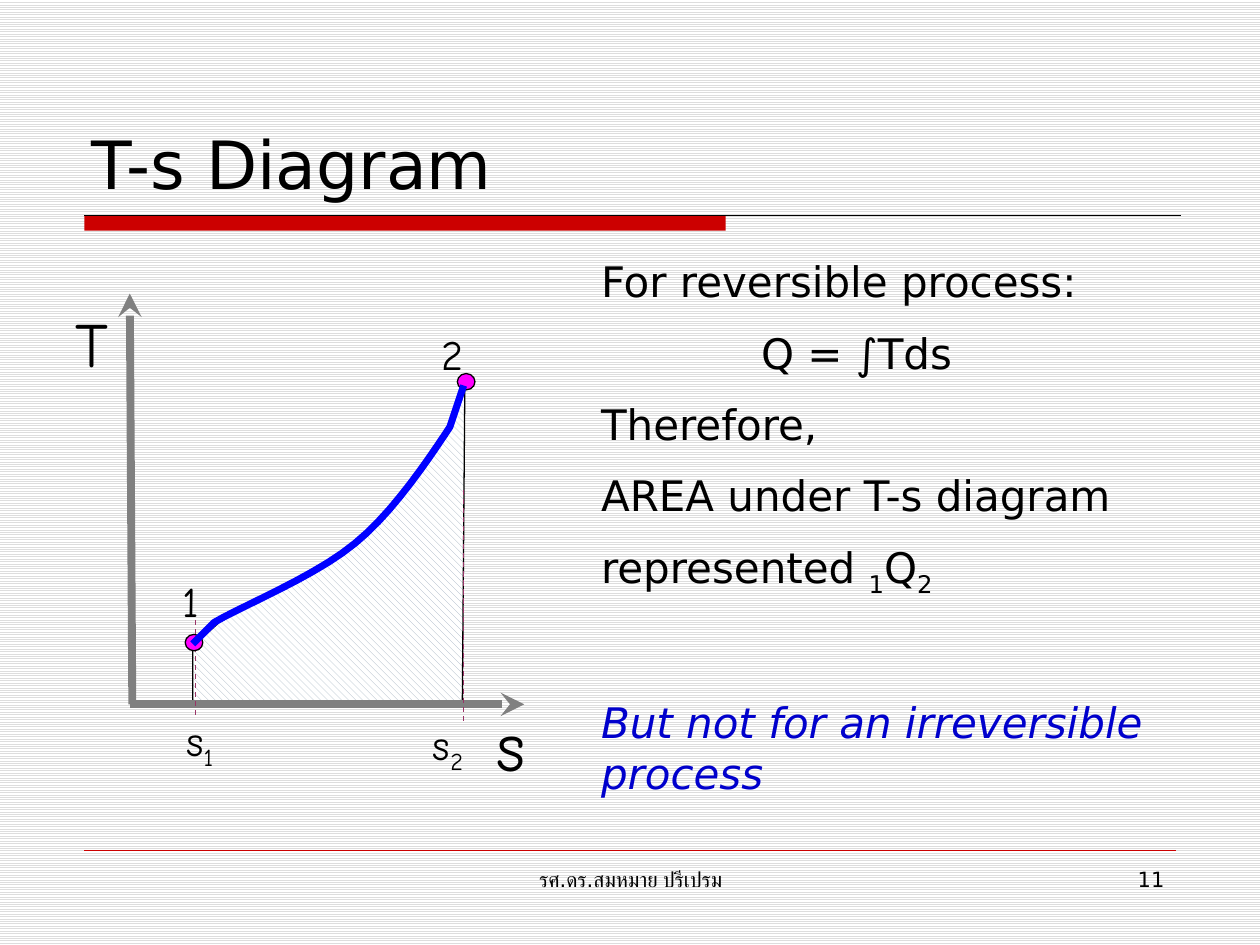
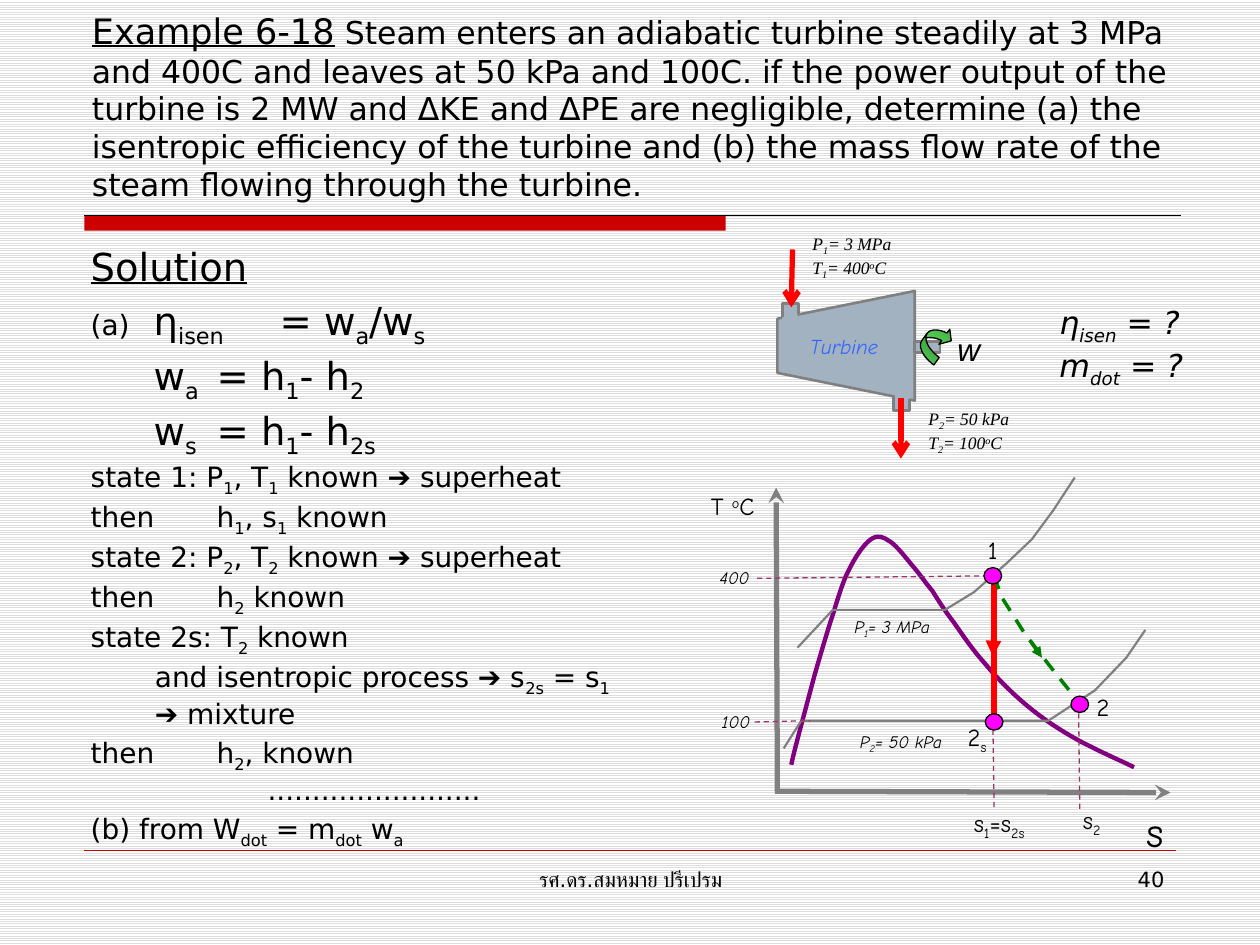
from pptx import Presentation
from pptx import util as u
from pptx.dml.color import RGBColor
from pptx.enum import dml, shapes, text
from pptx.oxml import ns, xmlchemy

BLACK = RGBColor(0x00, 0x00, 0x00)
WHITE = RGBColor(0xFF, 0xFF, 0xFF)
STRIPE = RGBColor(0xDD, 0xDD, 0xDD)
BAND_RED = RGBColor(0xCC, 0x00, 0x00)
RED = RGBColor(0xFF, 0x00, 0x00)
GRAY = RGBColor(0x80, 0x80, 0x80)
STEEL = RGBColor(0xA3, 0xB2, 0xC1)
MAGENTA = RGBColor(0xFF, 0x00, 0xFF)
PLUM = RGBColor(0x99, 0x33, 0x66)
PURPLE = RGBColor(0x80, 0x00, 0x80)
BLUE = RGBColor(0x00, 0x00, 0xFF)
NOTE_BLUE = RGBColor(0x00, 0x00, 0xCC)
SKY = RGBColor(0x33, 0x66, 0xFF)
GREEN = RGBColor(0x00, 0x80, 0x00)
LIME = RGBColor(0x66, 0xFF, 0x66)
LEAF = RGBColor(0x3E, 0x9B, 0x3E)

SANS = "DejaVu Sans"
COMIC = "Comic Neue"
SERIF = "Times New Roman"
CENTER, RIGHT, LEFT = text.PP_ALIGN.CENTER, text.PP_ALIGN.RIGHT, text.PP_ALIGN.LEFT
AUTHOR = "รศ.ดร.สมหมาย ปรีเปรม"
MARKUP_RAISED = "o"


def add_xml(parent, tag, **attrs):
    """Append a DrawingML element with the given attributes."""
    child = xmlchemy.OxmlElement(tag)
    for name, value in attrs.items():
        child.set(name, str(value))
    parent.append(child)
    return child


def write(p, marked, **font):
    """Add runs to a paragraph; text between bars is lowered, a degree sign o raised."""
    for i, part in enumerate(marked.split("|")):
        if part:
            r = p.add_run()
            r.text = part
            for name, value in font.items():
                setattr(r.font, name, value)
            if i % 2:
                shift = 30000 if part == MARKUP_RAISED else -25000
                r.font._element.set("baseline", str(shift))


def style(p, size, name=SANS, color=BLACK, italic=False, align=LEFT):
    """Set the font and alignment of a whole paragraph."""
    p.alignment = align
    p.font.size = u.Pt(size)
    p.font.name = name
    p.font.italic = italic
    p.font.color.rgb = color


def unbullet(p, indent=0, tabs=()):
    """Remove the bullet and set the left indent and tab stops."""
    pPr = p._p.get_or_add_pPr()
    pPr.set("marL", str(u.Inches(indent)))
    pPr.set("indent", "0")
    add_xml(pPr, "a:buNone")
    if tabs:
        stops = add_xml(pPr, "a:tabLst")
        for stop in tabs:
            add_xml(stops, "a:tab", pos=u.Inches(stop), algn="l")


def place(sp, left, top, width, height):
    """Move and resize a shape."""
    sp.left, sp.top, sp.width, sp.height = map(u.Inches, (left, top, width, height))


def paint(sp, fill=None, line=None, weight=0.75):
    """Give a shape a flat fill and outline, or none."""
    sp.shadow.inherit = False
    if fill is None:
        sp.fill.background()
    else:
        sp.fill.solid()
        sp.fill.fore_color.rgb = fill
    if line is None:
        sp.line.fill.background()
    else:
        sp.line.color.rgb = line
        sp.line.width = u.Pt(weight)


def flatten(points, steps=10):
    """Turn points and cubic segments (six numbers) into plain points."""
    flat = []
    for point in points:
        if len(point) == 2:
            flat.append(point)
            continue
        knots = [flat[-1], point[:2], point[2:4], point[4:]]
        for i in range(1, steps + 1):
            t = i / steps
            weights = ((1 - t) ** 3, 3 * t * (1 - t) ** 2, 3 * t * t * (1 - t), t ** 3)
            flat.append(tuple(sum(w * k[axis] for w, k in zip(weights, knots))
                              for axis in (0, 1)))
    return flat


class Panel:
    """A region of a slide whose parts are placed from its top left corner."""

    def __init__(self, slide, left, top):
        """Keep the slide's shapes and the corner."""
        self.shapes, self.left, self.top = slide.shapes, left, top

    def at(self, x, y):
        """Return slide lengths for a point of the panel."""
        return u.Inches(self.left + x), u.Inches(self.top + y)

    def label(self, x, y, width, height, lines, size, name=COMIC, align=CENTER, **font):
        """Add a text box with one paragraph for each line."""
        box = self.shapes.add_textbox(*self.at(x, y), u.Inches(width), u.Inches(height))
        tf = box.text_frame
        tf.word_wrap = True
        for i, line in enumerate(lines.split("\n")):
            p = tf.add_paragraph() if i else tf.paragraphs[0]
            style(p, size, name, align=align, **font)
            write(p, line)

    def line(self, start, end, color, weight, arrow=None, dashed=False):
        """Add a straight line, with an arrowhead at its end if one is named."""
        c = self.shapes.add_connector(shapes.MSO_CONNECTOR.STRAIGHT,
                                      *self.at(*start), *self.at(*end))
        c.line.color.rgb = color
        c.line.width = u.Pt(weight)
        if dashed:
            c.line.dash_style = dml.MSO_LINE.DASH
        if arrow:
            add_xml(c._element.spPr.find(ns.qn("a:ln")), "a:tailEnd", type=arrow)
        add_xml(c._element.spPr, "a:effectLst")

    def guide(self, start, end):
        """Add a thin dashed guide line."""
        self.line(start, end, PLUM, 0.75, dashed=True)

    def shape(self, kind, x, y, width, height, **look):
        """Add a preset shape."""
        sp = self.shapes.add_shape(kind, *self.at(x, y), u.Inches(width), u.Inches(height))
        paint(sp, **look)
        return sp

    def dot(self, x, y):
        """Mark a state, centred on a point."""
        self.shape(shapes.MSO_SHAPE.OVAL, x - 0.07, y - 0.065, 0.14, 0.13,
                   fill=MAGENTA, line=BLACK)

    def outline(self, points, close=False, **look):
        """Add a freeform through points and cubic segments."""
        first, *rest = [self.at(*point) for point in flatten(points)]
        builder = self.shapes.build_freeform(*first)
        builder.add_line_segments(rest, close=close)
        sp = builder.convert_to_shape()
        paint(sp, **look)
        return sp


def add_framed_slide(prs, number):
    """Add a slide with the striped background, title band and footer."""
    slide = prs.slides.add_slide(prs.slide_layouts[1])
    fill = slide.background.fill
    fill.patterned()
    fill.pattern = dml.MSO_PATTERN.LIGHT_HORIZONTAL
    fill.fore_color.rgb, fill.back_color.rgb = STRIPE, WHITE
    frame = Panel(slide, 0.67, 1.71)
    frame.shape(shapes.MSO_SHAPE.RECTANGLE, 0, 0, 5.09, 0.12, fill=BAND_RED)
    frame.line((0, 0), (8.7, 0), BLACK, 0.75)
    frame.line((0, 5.04), (8.66, 5.04), BAND_RED, 0.25)
    frame.label(2.75, 5.12, 3.17, 0.52, AUTHOR, 12, SANS)
    frame.label(6.5, 5.12, 2.17, 0.52, str(number), 12, SANS, RIGHT)
    title = slide.shapes.title
    place(title, 0.63, 0.33, 8.75, 1.33)
    title.text_frame.vertical_anchor = text.MSO_ANCHOR.BOTTOM
    title.text_frame.auto_size = text.MSO_AUTO_SIZE.NONE
    return slide


def fill_body(slide, box, rows, spacing, line_spacing=1.0):
    """Fill the body placeholder with (size, indent, tabs, text) rows."""
    body = slide.placeholders[1]
    place(body, *box)
    tf = body.text_frame
    tf.auto_size = text.MSO_AUTO_SIZE.NONE
    for i, (size, indent, tabs, line) in enumerate(rows):
        p = tf.add_paragraph() if i else tf.paragraphs[0]
        unbullet(p, indent, tabs)
        style(p, size)
        p.line_spacing = line_spacing
        p.space_before = u.Pt(spacing * size if i else 0)
        write(p, line)
    return tf.paragraphs


def draw_area_diagram(slide, left, top):
    """Draw the T-s curve with the hatched area below it."""
    d = Panel(slide, left, top)
    area = d.outline([(1.53, 3.6), (1.53, 3.13), (1.74, 2.94),
                      (1.97, 2.8, 2.6, 2.51, 2.9, 2.25),
                      (3.21, 1.99, 3.45, 1.56, 3.58, 1.36),
                      (3.69, 1.03), (3.67, 3.58)], close=True, line=BLACK)
    area.fill.patterned()
    area.fill.pattern = dml.MSO_PATTERN.WIDE_DOWNWARD_DIAGONAL
    area.fill.fore_color.rgb, area.fill.back_color.rgb = STEEL, WHITE
    d.line((1.05, 3.59), (1.03, 0.33), GRAY, 4.5, "stealth")
    d.line((1.03, 3.59), (4.16, 3.59), GRAY, 4.5, "stealth")
    d.guide((3.68, 1.89), (3.68, 3.74))
    d.guide((1.55, 2.92), (1.55, 3.68))
    d.dot(3.7, 1.03)
    d.dot(1.54, 3.1)
    d.outline([(1.53, 3.11), (1.7, 2.94), (1.92, 2.81, 2.51, 2.57, 2.82, 2.31),
               (3.13, 2.06, 3.43, 1.6, 3.57, 1.39), (3.68, 1.06)], line=BLUE, weight=4)
    d.label(0.47, 0.37, 0.52, 0.29, "T", 36)
    d.label(3.71, 3.52, 0.69, 0.6, "s", 40)
    for x, y, width, name in ((1.34, 3.62, 0.49, "s|1|"), (3.21, 3.65, 0.69, "s|2|"),
                              (1.27, 2.52, 0.49, "1"), (3.35, 0.56, 0.49, "2")):
        d.label(x, y, width, 0.35, name, 24)


def draw_steam_diagram(slide, left, top):
    """Draw the saturation dome, the two isobars and the expansion."""
    d = Panel(slide, left, top)
    d.outline([(1.28, 3.07), (1.3, 2.97, 1.38, 2.68, 1.43, 2.49),
               (1.48, 2.3, 1.54, 2.1, 1.59, 1.94), (1.64, 1.79, 1.67, 1.67, 1.72, 1.56),
               (1.77, 1.45, 1.84, 1.34, 1.9, 1.29), (1.95, 1.25, 1.99, 1.25, 2.05, 1.29),
               (2.11, 1.32, 2.19, 1.43, 2.25, 1.5), (2.31, 1.57, 2.34, 1.62, 2.4, 1.69),
               (2.45, 1.77, 2.5, 1.85, 2.57, 1.94), (2.64, 2.04, 2.72, 2.16, 2.82, 2.27),
               (2.91, 2.38, 3.03, 2.5, 3.15, 2.6), (3.27, 2.7, 3.39, 2.78, 3.53, 2.86),
               (3.67, 2.94, 3.9, 3.04, 4, 3.09)], line=PURPLE, weight=2.5)
    d.line((1.17, 3.28), (1.16, 0.87), GRAY, 3, "stealth")
    d.line((1.15, 3.28), (4.29, 3.29), GRAY, 3, "stealth")
    for isobar in ([(1.22, 2.94), (1.36, 2.72), (3.32, 2.72), (3.69, 2.48),
                    (3.94, 2.22), (4.09, 2)],
                   [(1.33, 2.14), (1.61, 1.84), (2.5, 1.84), (2.73, 1.7), (2.99, 1.47),
                    (3.19, 1.28), (3.36, 1.05), (3.53, 0.79)]):
        d.outline(isobar, line=GRAY, weight=1.25)
    for start, end in (((2.88, 2.72), (2.89, 3.43)), ((3.56, 2.59), (3.57, 3.42)),
                       ((1.01, 1.59), (2.89, 1.57)), ((0.99, 2.73), (1.43, 2.72))):
        d.guide(start, end)
    d.line((2.89, 1.56), (2.89, 2.72), RED, 3)
    d.line((2.89, 1.96), (2.88, 2.21), RED, 3, "triangle")
    actual = d.outline([(2.89, 1.57), (2.95, 1.74), (3.14, 2.04), (3.39, 2.36),
                        (3.56, 2.57)], line=GREEN, weight=2)
    actual.line.dash_style = dml.MSO_LINE.DASH
    d.line((3.18, 2.09), (3.27, 2.22), GREEN, 2, "triangle")
    for x, y in ((2.88, 1.57), (2.89, 2.73), (3.57, 2.59)):
        d.dot(x, y)
    d.label(3.95, 3.34, 0.44, 0.29, "s", 24)
    for x, y, width, name in ((0.48, 0.85, 0.67, "T |o|C"), (2.71, 1.2, 0.34, "1"),
                              (2.51, 2.68, 0.49, "2|s|"), (3.57, 2.44, 0.37, "2"),
                              (2.54, 3.36, 0.78, "s|1|=s|2s|"), (3.42, 3.34, 0.49, "s|2|")):
        d.label(x, y, width, 0.35, name, 14)
    for x, y, width, name in ((1.62, 1.84, 0.92, "P|1|= 3 MPa"), (0.56, 1.45, 0.54, "400"),
                              (1.69, 2.75, 0.92, "P|2|= 50 kPa"), (0.57, 2.59, 0.54, "100")):
        d.label(x, y, width, 0.29, name, 10, italic=True)


def draw_turbine(slide, left, top):
    """Draw the turbine with its inlet, outlet, shaft and known values."""
    d = Panel(slide, left, top)
    steel = dict(line=GRAY, weight=1.5)
    d.outline([(1.26, 1.31), (0.17, 1.53), (0.17, 1.96), (1.26, 2.18)],
              close=True, fill=STEEL, **steel)
    for x, y, pipe in ((1.1, 2.13, [(1.09, 2.14), (1.09, 2.26), (1.22, 2.26), (1.22, 2.17)]),
                       (0.21, 1.41, [(0.21, 1.52), (0.21, 1.41), (0.34, 1.41), (0.34, 1.49)])):
        d.shape(shapes.MSO_SHAPE.RECTANGLE, x, y, 0.12, 0.13, fill=STEEL)
        d.outline(pipe, **steel)
    d.shape(shapes.MSO_SHAPE.RECTANGLE, 1.26, 1.71, 0.2, 0.09, fill=STEEL, **steel)
    spin = d.shape(shapes.MSO_SHAPE.CURVED_LEFT_ARROW, 1.33, 1.56, 0.19, 0.31, line=BLACK)
    spin.rotation = 215.8
    for i, value in enumerate((0.387, 0.774, 0.333)):
        spin.adjustments[i] = value
    spin.fill.gradient()
    spin.fill.gradient_angle = 270
    for stop, color in zip(spin.fill.gradient_stops, (LIME, LEAF)):
        stop.color.rgb = color
    d.line((0.29, 0.98), (0.28, 1.44), RED, 3, "arrow")
    d.line((1.15, 2.16), (1.15, 2.64), RED, 3, "arrow")
    d.label(1.5, 1.57, 0.22, 0.4, "w", 18, "Arial", LEFT, italic=True)
    d.label(0.33, 1.6, 0.86, 0.3, "Turbine", 12, align=LEFT, color=SKY, italic=True)
    d.label(0.35, 0.8, 0.9, 0.43, "P|1|= 3 MPa\nT|1|= 400|o|C", 10, SERIF, LEFT, italic=True)
    d.label(1.27, 2.19, 0.94, 0.43, "P|2|= 50 kPa\nT|2|= 100|o|C", 10, SERIF, LEFT,
            italic=True)
    d.label(2.31, 1.36, 1.4, 0.7, "η|isen| = ?\nm|dot| = ?", 18, SANS, LEFT, italic=True)


def build_diagram_slide(prs):
    """Build the slide on the area under the T-s curve."""
    slide = add_framed_slide(prs, 11)
    p = slide.shapes.title.text_frame.paragraphs[0]
    style(p, 38)
    write(p, "T-s Diagram")
    draw_area_diagram(slide, 0, 2)
    rows = [(24, 0, (), "For reversible process:"), (24, 1.27, (), "Q = ∫Tds"),
            (24, 0, (), "Therefore,"), (24, 0, (), "AREA under T-s diagram"),
            (24, 0, (), "represented |1|Q|2|"),
            (24, 0, (), "But not for an irreversible process")]
    note = fill_body(slide, (4.67, 1.98, 4.91, 4.49), rows, 0.5)[-1]
    style(note, 24, color=NOTE_BLUE, italic=True)
    note.space_before = u.Pt(56)


def build_example_slide(prs):
    """Build the worked turbine example."""
    slide = add_framed_slide(prs, 40)
    p = slide.shapes.title.text_frame.paragraphs[0]
    style(p, 18)
    write(p, "Example 6-18", size=u.Pt(20), underline=True)
    write(p, " Steam enters an adiabatic turbine steadily at 3 MPa and 400C and leaves at "
             "50 kPa and 100C. if the power output of the turbine is 2 MW and ΔKE and ΔPE are "
             "negligible, determine (a) the isentropic efficiency of the turbine and (b) the "
             "mass flow rate of the steam flowing through the turbine.")
    equation, then = (1.52, 2.53), (0.92,)
    rows = [(22, 0, (), ""), (22, 0, equation, ""),
            (22, 0, equation, "\tw|a|\t= h|1|- h|2|"),
            (22, 0, equation, "\tw|s|\t= h|1|- h|2s|"),
            (16, 0, (), "state 1: P|1|, T|1| known ➔ superheat"),
            (16, 0, then, "then\th|1|, s|1| known"),
            (16, 0, (), "state 2: P|2|, T|2| known ➔ superheat"),
            (16, 0, then, "then\th|2| known"),
            (16, 0, (), "state 2s: T|2| known"),
            (16, 0.51, (), "and isentropic process ➔ s|2s| = s|1|"),
            (16, 0.51, (), "➔ mixture"),
            (16, 0, then, "then\th|2|, known"),
            (16, 0, (), "." * 24),
            (16, 0, (), "(b) from W|dot| = m|dot| w|a|")]
    lines = fill_body(slide, (0.62, 1.92, 4.7, 4.67), rows, 0.2, 0.9)
    write(lines[0], "Solution", underline=True)
    write(lines[1], "(a)", size=u.Pt(16))
    write(lines[1], "\tη|isen|\t= w|a|/w|s|")
    lines[-2].alignment = CENTER
    draw_steam_diagram(slide, 5, 3)
    draw_turbine(slide, 6, 1)


def main():
    """Build and save the two slides."""
    prs = Presentation()
    prs.slide_width, prs.slide_height = u.Inches(10), u.Inches(7.5)
    build_diagram_slide(prs)
    build_example_slide(prs)
    prs.save("out.pptx")


if __name__ == "__main__":
    main()
